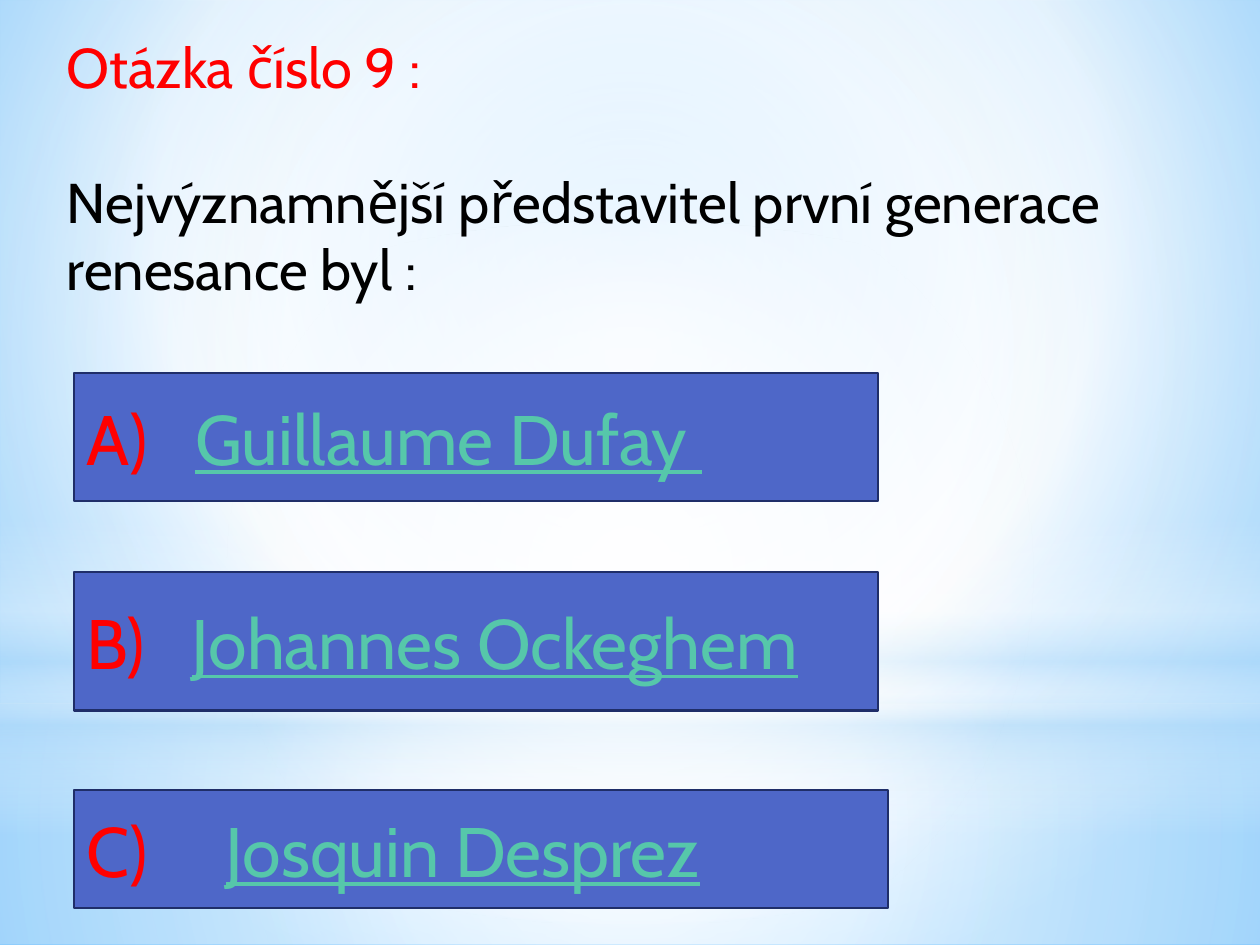
from lxml.etree import SubElement as Sub
from pptx import Presentation
from pptx.dml.color import RGBColor
from pptx.enum.shapes import MSO_SHAPE as Geo
from pptx.enum.text import MSO_ANCHOR as Anchor, MSO_AUTO_SIZE as Auto, PP_ALIGN as Align
from pptx.oxml.ns import qn
from pptx.util import Pt

RED = RGBColor(0xFF, 0x00, 0x00)
BLACK = RGBColor(0x00, 0x00, 0x00)
WHITE = RGBColor(0xFF, 0xFF, 0xFF)
BLUE = RGBColor(0x4E, 0x67, 0xC8)
NAVY = RGBColor(0x1F, 0x2E, 0x69)
TEAL = RGBColor(0x56, 0xC7, 0xAA)
SKY = RGBColor(0x9E, 0xD5, 0xFF)
DEEP = RGBColor(0x5B, 0xB9, 0xFF)
PALE = RGBColor(0xB4, 0xDC, 0xFA)
FONT = "Cabin"
MID = (50, 50, 50, 50)

WAVES = [
    (Geo.RECTANGLE, (0, 402, 720, 138),
     [(0, WHITE, 91), (37, WHITE, 76), (100, PALE, 79)], MID),
    (Geo.RECTANGLE, (0, 0, 720, 402),
     [(0, WHITE, 89), (48, WHITE, 62), (100, PALE, 79)], MID),
    (Geo.RECTANGLE, (0, 297, 720, 180),
     [(0, WHITE, 0), (29, WHITE, 30), (45, PALE, 40), (55, WHITE, 26),
      (65, PALE, 60), (100, WHITE, 0)], None),
    (Geo.OVAL, (0, 126, 720, 402), [(0, WHITE, 100), (56, WHITE, 0)], MID),
]
PICKS = [
    ("A)", "Guillaume Dufay ", (42.5, 213, 459.5, 73.5), 62),
    ("B)", "Johannes Ockeghem", (42.5, 327, 459.5, 79), 60),
    ("C)", "Josquin Desprez", (42.5, 451.5, 465, 67.5), 79.5),
]


def blend(host, stops, focus):
    solid = host.find(qn("a:solidFill"))
    grad = solid.makeelement(qn("a:gradFill"), {"rotWithShape": "1"})
    host.replace(solid, grad)
    group = Sub(grad, qn("a:gsLst"))
    for pos, color, alpha in stops:
        stop = Sub(group, qn("a:gs"), pos=str(pos * 1000))
        tone = Sub(stop, qn("a:srgbClr"), val=str(color))
        if alpha < 100:
            Sub(tone, qn("a:alpha"), val=str(alpha * 1000))
    if focus:
        way = Sub(grad, qn("a:path"), {"path": "circle"})
        Sub(way, qn("a:fillToRect"),
            {side: str(part * 1000) for side, part in zip("ltrb", focus)})
    else:
        Sub(grad, qn("a:lin"), ang="5400000", scaled="0")


def write(para, text, size, color, under=None):
    run = para.add_run()
    run.text = text
    font = run.font
    font.name, font.size, font.underline = FONT, Pt(size), under
    font.color.rgb = color


def block(slide, kind, box):
    shape = slide.shapes.add_shape(kind, *map(Pt, box))
    shape.shadow.inherit = False
    shape.fill.solid()
    return shape


def scene(slide):
    slide.background.fill.solid()
    blend(slide.element.find(".//" + qn("p:bgPr")),
          [(0, SKY, 100), (60, WHITE, 100), (100, DEEP, 100)], (20, 10, 20, 60))
    for kind, box, stops, focus in WAVES:
        wave = block(slide, kind, box)
        wave.line.fill.background()
        blend(wave.element.spPr, stops, focus)


def head(slide, box):
    title = slide.shapes.title
    title.left, title.top, title.width, title.height = map(Pt, box)
    slide.shapes.element.append(title.element)
    frame = title.text_frame
    frame.auto_size, frame.word_wrap = Auto.NONE, True
    frame.vertical_anchor = Anchor.TOP
    first, second = frame.paragraphs[0], frame.add_paragraph()
    first.alignment = second.alignment = Align.LEFT
    first.space_after = Pt(38.5)
    write(first, "Otázka číslo 9 :", 32, RED)
    write(second, "Nejvýznamnější představitel první generace renesance byl :", 32, BLACK)


def pick(slide, mark, name, box, stop):
    shape = block(slide, Geo.RECTANGLE, box)
    shape.fill.fore_color.rgb = BLUE
    shape.line.color.rgb = NAVY
    shape.line.width = Pt(1.25)
    frame = shape.text_frame
    frame.word_wrap = True
    frame.vertical_anchor = Anchor.MIDDLE
    para = frame.paragraphs[0]
    para.alignment = Align.LEFT
    tabs = Sub(para._p.get_or_add_pPr(), qn("a:tabLst"))
    Sub(tabs, qn("a:tab"), pos=str(Pt(stop)), algn="l")
    write(para, mark + "\t", 40, RED)
    write(para, name, 40, TEAL, True)


def main():
    deck = Presentation()
    deck.slide_width, deck.slide_height = Pt(720), Pt(540)
    slide = deck.slides.add_slide(deck.slide_layouts[5])
    scene(slide)
    head(slide, (31, 15, 646.5, 163))
    for item in PICKS:
        pick(slide, *item)
    deck.save("out.pptx")


if __name__ == "__main__":
    main()
